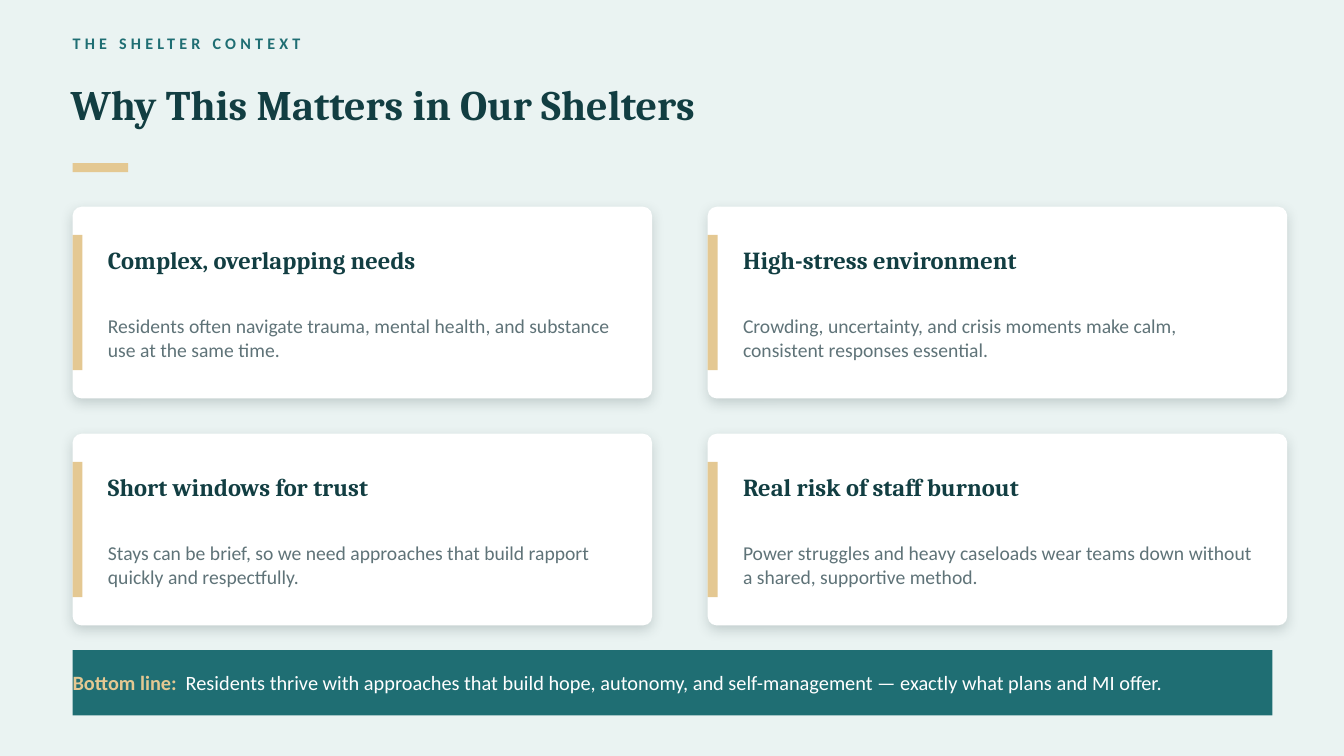
from lxml import etree
from pptx import Presentation
from pptx.dml.color import RGBColor
from pptx.enum.shapes import MSO_SHAPE
from pptx.enum.text import MSO_ANCHOR, PP_ALIGN
from pptx.oxml.ns import qn
from pptx.util import Cm, Pt

RECT = MSO_SHAPE.RECTANGLE
ROUNDED = MSO_SHAPE.ROUNDED_RECTANGLE
MIDDLE = MSO_ANCHOR.MIDDLE
LEFT = PP_ALIGN.LEFT

SANS, SERIF = "Calibri", "Cambria"
MIST, WHITE, SAND = "EAF3F2", "FFFFFF", "E4C892"
TEAL, DEEP_TEAL, SLATE, SHADE = "1F6E73", "123E42", "5F7378", "1A3033"

MARGIN = 1.83
CARD_TOP, CARD_WIDTH, CARD_HEIGHT = 5.21, 14.6, 4.83
COLUMN_STEP, ROW_STEP = 16, 5.72
CARD_PADDING, TEXT_INDENT, TEXT_WIDTH = 0.71, 0.89, 13.08

REASONS = [
    ("Complex, overlapping needs",
     "Residents often navigate trauma, mental health, and substance use at the same time."),
    ("High-stress environment",
     "Crowding, uncertainty, and crisis moments make calm, consistent responses essential."),
    ("Short windows for trust",
     "Stays can be brief, so we need approaches that build rapport quickly and respectfully."),
    ("Real risk of staff burnout",
     "Power struggles and heavy caseloads wear teams down without a shared, supportive method."),
]


def color(hex_value):
    return RGBColor.from_string(hex_value)


def add_block(slide, box, fill, kind=RECT):
    block = slide.shapes.add_shape(kind, *map(Cm, box))
    block.shadow.inherit = False
    block.fill.solid()
    block.fill.fore_color.rgb = color(fill)
    block.line.fill.background()
    return block


def prepare_text(holder, line_spacing=None):
    frame = holder.text_frame
    frame.word_wrap = True
    frame.vertical_anchor = MIDDLE
    frame.margin_left = frame.margin_right = 0
    frame.margin_top = frame.margin_bottom = 0
    paragraph = frame.paragraphs[0]
    paragraph.alignment = LEFT
    if line_spacing:
        paragraph.line_spacing = line_spacing
    return paragraph


def add_run(paragraph, words, size, font, ink, bold=False, tracking=0):
    run = paragraph.add_run()
    run.text = words
    run.font.size = Pt(size)
    run.font.name = font
    run.font.bold = bold
    run.font.color.rgb = color(ink)
    if tracking:
        run.font._element.set("spc", str(tracking * 100))


def add_label(slide, box, words, size, font, ink, bold=False, tracking=0, line_spacing=None):
    label = slide.shapes.add_textbox(*map(Cm, box))
    add_run(prepare_text(label, line_spacing), words, size, font, ink, bold, tracking)


def add_soft_shadow(card):
    effects = card._element.spPr.find(qn("a:effectLst"))
    shadow = etree.SubElement(effects, qn("a:outerShdw"), blurRad=str(Pt(9)),
                              dist=str(Pt(3)), dir="5400000", algn="ctr", rotWithShape="0")
    tint = etree.SubElement(shadow, qn("a:srgbClr"), val=SHADE)
    etree.SubElement(tint, qn("a:alpha"), val="18000")


def add_reason_card(slide, left, top, heading, detail):
    card = add_block(slide, (left, top, CARD_WIDTH, CARD_HEIGHT), WHITE, ROUNDED)
    card.adjustments[0] = 0.047
    add_soft_shadow(card)
    inner_top = top + CARD_PADDING
    text_left = left + TEXT_INDENT
    add_block(slide, (left, inner_top, 0.25, CARD_HEIGHT - 2 * CARD_PADDING), SAND)
    add_label(slide, (text_left, inner_top, TEXT_WIDTH, 1.27), heading, 17.5, SERIF, DEEP_TEAL, bold=True)
    add_label(slide, (text_left, top + 2.08, TEXT_WIDTH, 2.41), detail, 14, SANS, SLATE, line_spacing=1.05)


def add_bottom_line(slide):
    banner = add_block(slide, (MARGIN, 16.38, 30.23, 1.65), TEAL)
    sentence = prepare_text(banner)
    add_run(sentence, "Bottom line:", 14.5, SANS, SAND, bold=True)
    add_run(sentence, " ", 14.5, SANS, SAND, bold=True, tracking=3)
    add_run(sentence, "Residents thrive with approaches that build hope, autonomy, and "
            "self-management — exactly what plans and MI offer.", 14.5, SANS, WHITE)


def main():
    deck = Presentation()
    deck.slide_width, deck.slide_height = Cm(33.86), Cm(19.05)
    slide = deck.slides.add_slide(deck.slide_layouts[6])
    slide.background.fill.solid()
    slide.background.fill.fore_color.rgb = color(MIST)

    add_label(slide, (MARGIN, 0.71, 27.94, 0.76), "THE SHELTER CONTEXT", 11.5, SANS, TEAL,
              bold=True, tracking=3)
    add_label(slide, (1.78, 1.4, 30.48, 2.41), "Why This Matters in Our Shelters", 30, SERIF,
              DEEP_TEAL, bold=True)
    add_block(slide, (MARGIN, 4.11, 1.4, 0.23), SAND)

    for index, (heading, detail) in enumerate(REASONS):
        row, column = divmod(index, 2)
        add_reason_card(slide, MARGIN + column * COLUMN_STEP, CARD_TOP + row * ROW_STEP,
                        heading, detail)
    add_bottom_line(slide)
    deck.save("out.pptx")


if __name__ == "__main__":
    main()
